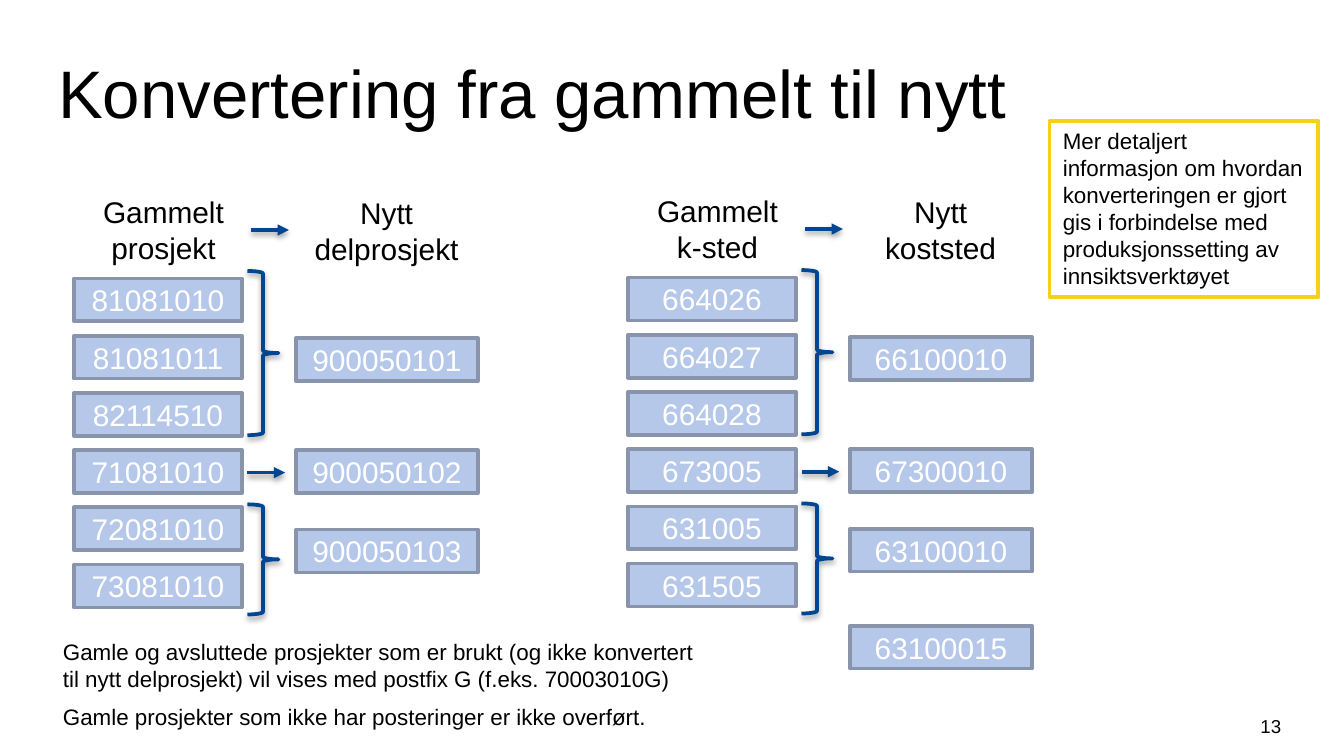
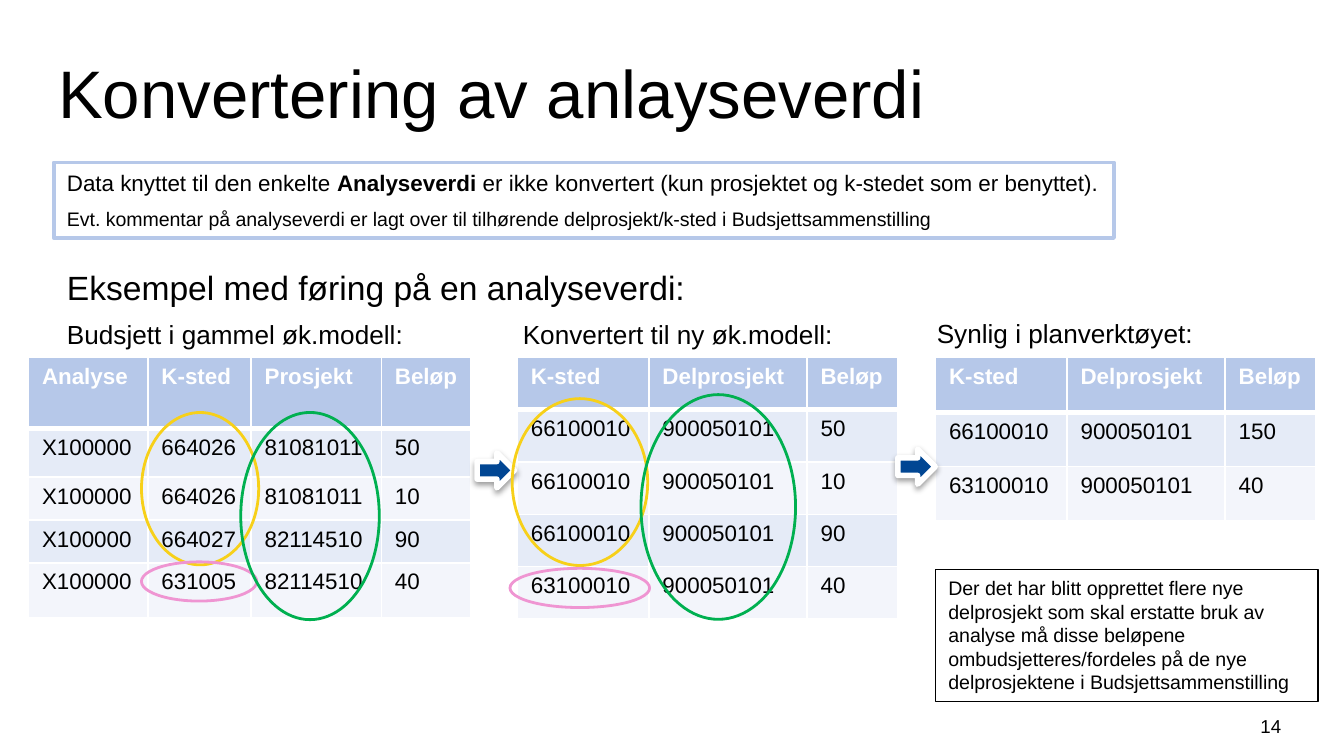
from dataclasses import dataclass
from typing import Optional

from lxml import etree
from pptx import Presentation
from pptx.dml.color import RGBColor
from pptx.enum.shapes import MSO_CONNECTOR, MSO_SHAPE
from pptx.enum.text import MSO_ANCHOR, PP_ALIGN
from pptx.oxml.ns import qn
from pptx.util import Pt

RECTANGLE = MSO_SHAPE.RECTANGLE
ELLIPSE = MSO_SHAPE.OVAL
BRACE = MSO_SHAPE.RIGHT_BRACE
BLOCK_ARROW = MSO_SHAPE.RIGHT_ARROW
STRAIGHT = MSO_CONNECTOR.STRAIGHT
LEFT, CENTER = PP_ALIGN.LEFT, PP_ALIGN.CENTER
TOP, MIDDLE = MSO_ANCHOR.TOP, MSO_ANCHOR.MIDDLE

FONT = "Arial"
COLORS = {
    "black": "000000",
    "white": "FFFFFF",
    "light_blue": "B6C8E9",
    "box_line": "8794AC",
    "navy": "014693",
    "yellow": "F7D019",
    "pink": "EF95D2",
    "green": "00B050",
    "odd_row": "E5EBF7",
    "even_row": "F3F5FB",
}


@dataclass(frozen=True)
class Box:
    left: float
    top: float
    width: float
    height: float

    def lengths(self) -> tuple:
        return Pt(self.left), Pt(self.top), Pt(self.width), Pt(self.height)


@dataclass(frozen=True)
class Line:
    color: str
    width: float


@dataclass(frozen=True)
class TextLine:
    """A paragraph whose every second run is bold."""
    runs: tuple
    size: float
    color: str = "black"
    align: int = LEFT
    before: float = 0
    after: float = 0


@dataclass(frozen=True)
class Conversion:
    left: float
    top: float
    old_heading: str
    new_heading: str
    old_codes: tuple
    new_codes: tuple


@dataclass(frozen=True)
class LedgerTable:
    left: float
    columns: tuple
    heights: tuple
    rows: tuple


CONVERSIONS = (
    Conversion(39.6, 149.2, "Gammelt prosjekt", "Nytt delprosjekt",
               ("81081010", "81081011", "82114510", "71081010", "72081010", "73081010"),
               ("900050101", "900050102", "900050103")),
    Conversion(336.4, 148.7, "Gammelt k-sted", "Nytt koststed",
               ("664026", "664027", "664028", "673005", "631005", "631505"),
               ("66100010", "67300010", "63100010", "63100015")),
)
OLD_CODE_PITCH = 30.65
NEW_CODE_TOPS = (32, 92, 134.5, 186.5)
BRACES = ((-4, 88), (121, 59))

NEW_COLUMNS = (70.5, 84.7, 48.7)
NEW_HEADER = ("K-sted", "Delprosjekt", "Beløp")
TABLE_TOP = 191.6
TABLES = (
    LedgerTable(15.3, (64, 55.3, 69.8, 48), (38, 26, 23, 23, 29.5), (
        ("Analyse", "K-sted", "Prosjekt", "Beløp"),
        ("X100000", "664026", "81081011", "50"),
        ("X100000", "664026", "81081011", "10"),
        ("X100000", "664027", "82114510", "90"),
        ("X100000", "631005", "82114510", "40"),
    )),
    LedgerTable(277.2, NEW_COLUMNS, (28,) * 5, (
        NEW_HEADER,
        ("66100010", "900050101", "50"),
        ("66100010", "900050101", "10"),
        ("66100010", "900050101", "90"),
        ("63100010", "900050101", "40"),
    )),
    LedgerTable(501.2, NEW_COLUMNS, (29.2,) * 3, (
        NEW_HEADER,
        ("66100010", "900050101", "150"),
        ("63100010", "900050101", "40"),
    )),
)
LABELS = (
    (Box(28.8, 139.7, 390, 29), "Eksempel med føring på en analyseverdi:", 18),
    (Box(28.8, 167, 221, 24.5), "Budsjett i gammel øk.modell:", 14),
    (Box(273, 167, 211, 24.5), "Konvertert til ny øk.modell:", 14),
    (Box(494.8, 166.5, 211, 24.5), "Synlig i planverktøyet:", 14),
)
HIGHLIGHTS = (
    (Box(75.8, 221, 62.8, 81.6), "yellow"),
    (Box(274.4, 213.6, 72.6, 89.4), "yellow"),
    (Box(75.8, 301, 61.8, 21), "pink"),
    (Box(273.2, 304.5, 74.8, 21), "pink"),
    (Box(129, 221, 74.2, 111), "green"),
    (Box(343.4, 211.4, 82.8, 120.4), "green"),
)


def rgb(name: str) -> RGBColor:
    return RGBColor.from_string(COLORS[name])


def add_effects(shape, shadow: bool) -> None:
    properties = shape._element.spPr
    for existing in properties.findall(qn("a:effectLst")):
        properties.remove(existing)
    effects = etree.SubElement(properties, qn("a:effectLst"))
    if shadow:
        outer = etree.SubElement(effects, qn("a:outerShdw"), blurRad="40000",
                                 dist="20000", dir="5400000", rotWithShape="0")
        color = etree.SubElement(outer, qn("a:srgbClr"), val=COLORS["black"])
        etree.SubElement(color, qn("a:alpha"), val="38000")


def set_line(line_format, line: Optional[Line]) -> None:
    if line is None:
        line_format.fill.background()
        return
    line_format.color.rgb = rgb(line.color)
    line_format.width = Pt(line.width)


def write_text(frame, lines: tuple, anchor: int) -> None:
    frame.word_wrap = True
    frame.vertical_anchor = anchor
    for index, line in enumerate(lines):
        paragraph = frame.paragraphs[0] if index == 0 else frame.add_paragraph()
        paragraph.alignment = line.align
        paragraph.space_before = Pt(line.before)
        paragraph.space_after = Pt(line.after)
        paragraph.font.name = FONT
        paragraph.font.size = Pt(line.size)
        paragraph.font.color.rgb = rgb(line.color)
        for position, text in enumerate(line.runs):
            run = paragraph.add_run()
            run.text = text
            if position % 2:
                run.font.bold = True


def add_label(slide, box: Box, text: str, size: float, align: int = LEFT) -> None:
    shape = slide.shapes.add_textbox(*box.lengths())
    write_text(shape.text_frame, (TextLine((text,), size, align=align),), TOP)


def add_figure(slide, kind: int, box: Box, fill: Optional[str] = None,
               line: Optional[Line] = None, shadow: bool = False,
               lines: tuple = (), anchor: int = TOP) -> None:
    shape = slide.shapes.add_shape(kind, *box.lengths())
    if fill:
        shape.fill.solid()
        shape.fill.fore_color.rgb = rgb(fill)
    else:
        shape.fill.background()
    set_line(shape.line, line)
    add_effects(shape, shadow)
    if lines:
        write_text(shape.text_frame, lines, anchor)


def add_arrow(slide, left: float, top: float, length: float = 20.2) -> None:
    arrow = slide.shapes.add_connector(STRAIGHT, Pt(left), Pt(top), Pt(left + length), Pt(top))
    set_line(arrow.line, Line("navy", 2))
    etree.SubElement(arrow.line._get_or_add_ln(), qn("a:tailEnd"), type="triangle")
    add_effects(arrow, True)


def add_code(slide, left: float, top: float, width: float, code: str) -> None:
    add_figure(slide, RECTANGLE, Box(left, top, width, 23), "light_blue", Line("box_line", 2),
               lines=(TextLine((code,), 16, "white", CENTER),), anchor=MIDDLE)


def add_conversion(slide, conversion: Conversion) -> None:
    left, top = conversion.left, conversion.top
    add_label(slide, Box(left + 3, top - 49, 90, 46), conversion.old_heading, 16, CENTER)
    add_label(slide, Box(left + 114.5, top - 48.5, 106, 46), conversion.new_heading, 16, CENTER)
    add_arrow(slide, left + 95, top - 26)
    for index, code in enumerate(conversion.old_codes):
        add_code(slide, left, top + index * OLD_CODE_PITCH, 90, code)
    for offset, code in zip(NEW_CODE_TOPS, conversion.new_codes):
        add_code(slide, left + 119, top + offset, 97.4, code)
    for offset, height in BRACES:
        add_figure(slide, BRACE, Box(left + 93, top + offset, 16.6, height),
                   line=Line("navy", 2), shadow=True)
    add_arrow(slide, left + 93, top + 104)


def set_borders(cell, header: bool) -> None:
    properties = cell._tc.get_or_add_tcPr()
    thick_side = "a:lnB" if header else "a:lnT"
    for index, side in enumerate(("a:lnL", "a:lnR", "a:lnT", "a:lnB")):
        width = 3 if header and side == thick_side else 1
        border = etree.Element(qn(side), w=str(Pt(width)))
        fill = etree.SubElement(border, qn("a:solidFill"))
        etree.SubElement(fill, qn("a:srgbClr"), val=COLORS["white"])
        properties.insert(index, border)


def add_ledger(slide, ledger: LedgerTable) -> None:
    box = Box(ledger.left, TABLE_TOP, sum(ledger.columns), sum(ledger.heights))
    table = slide.shapes.add_table(len(ledger.rows), len(ledger.columns), *box.lengths()).table
    for column, width in zip(table.columns, ledger.columns):
        column.width = Pt(width)
    for row_index, (values, height) in enumerate(zip(ledger.rows, ledger.heights)):
        header = row_index == 0
        fill = "light_blue" if header else ("even_row", "odd_row")[row_index % 2]
        table.rows[row_index].height = Pt(height)
        for cell, value in zip(table.rows[row_index].cells, values):
            cell.fill.solid()
            cell.fill.fore_color.rgb = rgb(fill)
            set_borders(cell, header)
            cell.text = value
            font = cell.text_frame.paragraphs[0].font
            font.name, font.size, font.bold = FONT, Pt(12), header
            font.color.rgb = rgb("white" if header else "black")


def add_slide(presentation, title: str, number: int):
    slide = presentation.slides.add_slide(presentation.slide_layouts[6])
    add_label(slide, Box(24, 24, 663, 51), title, 36)
    add_label(slide, Box(667.5, 379.5, 26.6, 21.6), str(number), 10, CENTER)
    return slide


def build_code_slide(presentation) -> None:
    slide = add_slide(presentation, "Konvertering fra gammelt til nytt", 13)
    for conversion in CONVERSIONS:
        add_conversion(slide, conversion)
    add_figure(slide, RECTANGLE, Box(26.6, 338.4, 360.7, 57), "white", lines=(
        TextLine(("Gamle og avsluttede prosjekter som er brukt (og ikke konvertert til nytt "
                  "delprosjekt) vil vises med postfix G (f.eks. 70003010G)",), 12, after=6),
        TextLine(("Gamle prosjekter som ikke har posteringer er ikke overført.",), 12, after=6),
    ))
    add_figure(slide, RECTANGLE, Box(562.3, 64.8, 144, 94.4), "white", Line("yellow", 2), lines=(
        TextLine(("Mer detaljert informasjon om hvordan konverteringen er gjort gis i "
                  "forbindelse med produksjonssetting av innsiktsverktøyet",), 12),
    ))


def build_example_slide(presentation) -> None:
    slide = add_slide(presentation, "Konvertering av anlayseverdi", 14)
    add_figure(slide, RECTANGLE, Box(28.8, 87, 568, 40.5), "white", Line("light_blue", 2), lines=(
        TextLine(("Data knyttet til den enkelte ", "Analyseverdi",
                  " er ikke konvertert (kun prosjektet og k-stedet som er benyttet)."), 12),
        TextLine(("Evt. kommentar på analyseverdi er lagt over til tilhørende "
                  "delprosjekt/k-sted i Budsjettsammenstilling",), 10.5, before=5.75),
    ))
    for ledger in TABLES:
        add_ledger(slide, ledger)
    for box, text, size in LABELS:
        add_label(slide, box, text, size)
    for left, top in ((255.6, 242.6), (481, 240.6)):
        add_figure(slide, BLOCK_ARROW, Box(left, top, 20, 18.8), "navy", Line("white", 3), True)
    for box, color in HIGHLIGHTS:
        add_figure(slide, ELLIPSE, box, line=Line(color, 1.5))
    add_figure(slide, RECTANGLE, Box(501, 305.2, 205.2, 70.6), "white", Line("black", 0.75), lines=(
        TextLine(("Der det har blitt opprettet flere nye delprosjekt som skal erstatte bruk av "
                  "analyse må disse beløpene ombudsjetteres/fordeles på de nye delprosjektene "
                  "i Budsjettsammenstilling",), 10.5),
    ))


def main() -> None:
    presentation = Presentation()
    presentation.slide_width, presentation.slide_height = Pt(720), Pt(405)
    build_code_slide(presentation)
    build_example_slide(presentation)
    presentation.save("out.pptx")


if __name__ == "__main__":
    main()
